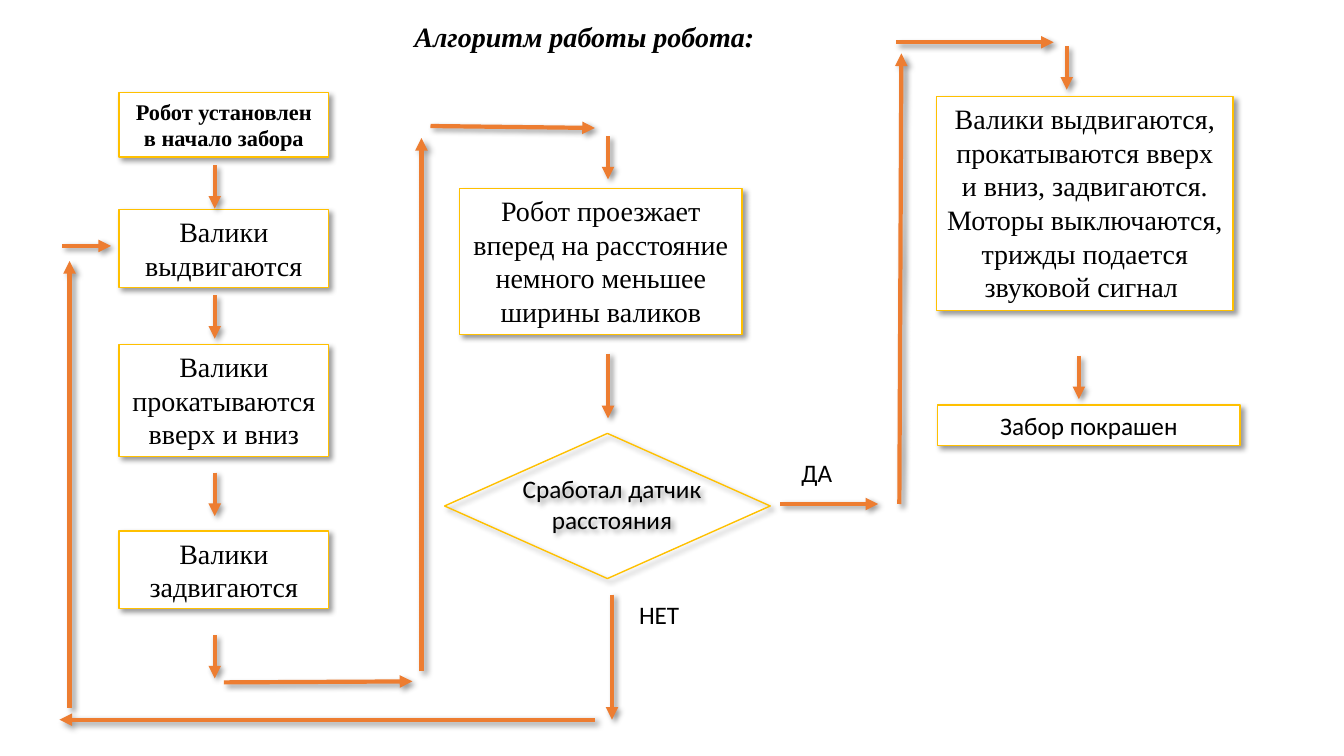
from pptx import Presentation
from pptx.dml.color import RGBColor
from pptx.enum.shapes import MSO_CONNECTOR, MSO_SHAPE
from pptx.enum.text import MSO_ANCHOR, MSO_AUTO_SIZE, PP_ALIGN
from pptx.oxml import parse_xml
from pptx.oxml.ns import nsdecls
from pptx.util import Inches, Pt

COLORS = {"text": "000000", "fill": "FFFFFF", "edge": "FFC000",
          "arrow": "ED7D31", "shade": "000000"}
SERIF = "Times New Roman"
SANS = "Calibri"

# Centre lines of the columns and length of a short arrow
LEFT_X = 2.13
MID_X = 6.03
STEP = 0.43


def color(name):
    return RGBColor.from_string(COLORS[name])


def add_shade(shape):
    """Soft shadow to the lower right; call after fill and line are set."""
    shape._element.spPr.append(parse_xml(
        f'<a:effectLst {nsdecls("a")}>'
        f'<a:outerShdw blurRad="{Pt(4)}" dist="{Pt(3)}" dir="2700000" '
        f'algn="tl" rotWithShape="0"><a:srgbClr val="{COLORS["shade"]}">'
        '<a:alpha val="40000"/></a:srgbClr></a:outerShdw></a:effectLst>'))


def set_text(shape, text, size, face, align=PP_ALIGN.CENTER,
             bold=False, italic=False):
    frame = shape.text_frame
    frame.text = text
    frame.word_wrap = True
    frame.auto_size = MSO_AUTO_SIZE.NONE
    frame.vertical_anchor = MSO_ANCHOR.TOP
    par = frame.paragraphs[0]
    par.alignment = align
    font = par.runs[0].font
    font.size, font.name = Pt(size), face
    font.bold, font.italic = bold, italic
    font.color.rgb = color("text")


def add_title(slide, text, box):
    title = slide.shapes.title
    title.left, title.top, title.width, title.height = map(Inches, box)
    set_text(title, text, 20, SERIF, PP_ALIGN.LEFT, True, True)


def add_outline(slide, kind, box):
    shape = slide.shapes.add_shape(kind, *map(Inches, box))
    shape.line.color.rgb = color("edge")
    shape.line.width = Pt(1)
    return shape


def add_block(slide, text, box, size=20, face=SERIF, bold=False):
    block = add_outline(slide, MSO_SHAPE.RECTANGLE, box)
    block.fill.solid()
    block.fill.fore_color.rgb = color("fill")
    add_shade(block)
    set_text(block, text, size, face, bold=bold)


def add_label(slide, text, box, align=PP_ALIGN.LEFT):
    label = slide.shapes.add_textbox(*map(Inches, box))
    set_text(label, text, 18, SANS, align)
    return label


def add_choice(slide, text, box, inner):
    label = add_label(slide, text, inner, PP_ALIGN.CENTER)
    add_shade(label)
    diamond = add_outline(slide, MSO_SHAPE.DIAMOND, box)
    diamond.fill.background()
    add_shade(diamond)


def add_arrow(slide, x1, y1, x2, y2):
    arrow = slide.shapes.add_connector(
        MSO_CONNECTOR.STRAIGHT, *map(Inches, (x1, y1, x2, y2)))
    arrow.line.color.rgb = color("arrow")
    arrow.line.width = Pt(3)
    arrow.line._get_or_add_ln().append(
        parse_xml(f'<a:tailEnd {nsdecls("a")} type="triangle"/>'))
    add_shade(arrow)


def main():
    deck = Presentation()
    deck.slide_width, deck.slide_height = Inches(13.33), Inches(7.5)
    slide = deck.slides.add_slide(deck.slide_layouts[5])
    add_title(slide, "Алгоритм работы робота:", (4.01, 0.14, 3.73, 0.44))

    # Left column: roller cycle
    add_block(slide, "Робот установлен в начало забора",
              (1.18, 0.92, 2.08, 0.64), 16, bold=True)
    for text, top, height in (
            ("Валики выдвигаются", 2.08, 0.77),
            ("Валики прокатываются вверх и вниз", 3.42, 1.11),
            ("Валики задвигаются", 5.27, 0.77)):
        add_block(slide, text, (1.18, top, 2.08, height))

    # Middle column: move and check
    add_block(slide, "Робот проезжает вперед на расстояние немного меньшее "
              "ширины валиков", (4.56, 1.87, 2.8, 1.45))
    add_choice(slide, "Сработал датчик расстояния",
               (4.41, 4.3, 3.23, 1.44), (4.92, 4.65, 2.3, 0.71))
    add_label(slide, "ДА", (7.85, 4.49, 0.58, 0.4))
    add_label(slide, "НЕТ", (6.24, 5.9, 0.64, 0.4))

    # Right column: finish
    add_block(slide, "Валики выдвигаются, прокатываются вверх и вниз, "
              "задвигаются. Моторы выключаются, трижды подается звуковой "
              "сигнал ", (9.29, 0.96, 2.94, 2.12))
    add_block(slide, "Забор покрашен", (9.3, 4.02, 3, 0.4), 18, SANS)

    # Short arrows pointing down
    for x, top in ((LEFT_X, 1.64), (LEFT_X, 2.93), (LEFT_X, 4.69),
                   (LEFT_X, 6.3), (MID_X, 1.35), (10.58, 0.46),
                   (10.7, 3.53)):
        add_arrow(slide, x, top, x, top + STEP)

    # Long arrows between the columns
    for ends in (
            (2.22, 6.77, 4.09, 6.76),   # to the middle column
            (4.18, 6.66, 4.18, 1.37),
            (4.27, 1.25, 5.9, 1.27),
            (MID_X, 3.51, MID_X, 4.15),
            (7.74, 5, 8.71, 5),         # yes: to the right column
            (8.92, 5, 8.94, 0.53),
            (8.89, 0.42, 10.45, 0.42),
            (6.07, 5.9, 6.07, 7.14),    # no: back to the cycle
            (5.9, 7.14, 0.59, 7.14),
            (0.69, 7.02, 0.69, 2.59),
            (0.62, 2.44, 1.1, 2.44)):
        add_arrow(slide, *ends)

    deck.save("out.pptx")


if __name__ == "__main__":
    main()
